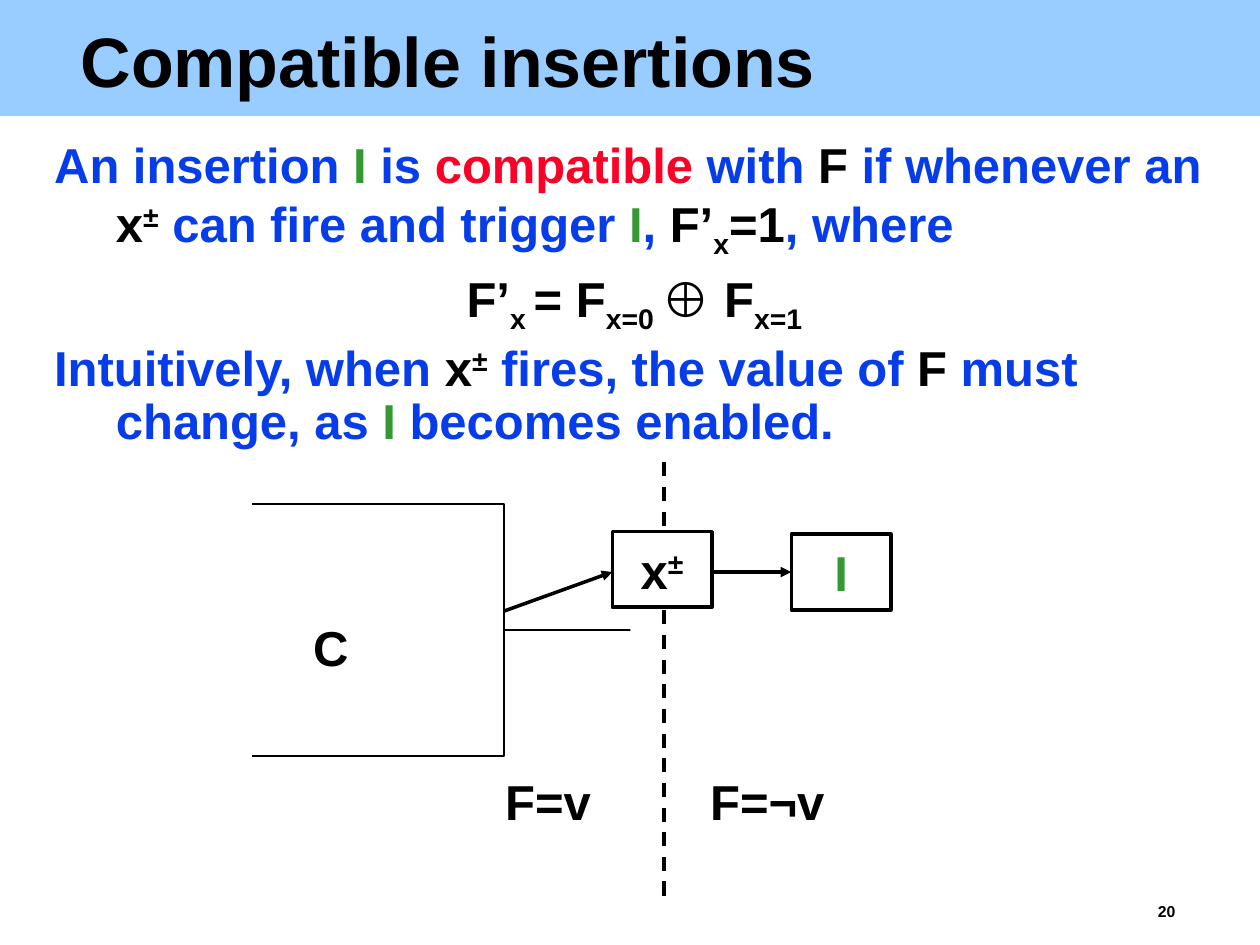
from dataclasses import dataclass

from pptx import Presentation
from pptx import util as u
from pptx.dml.color import RGBColor
from pptx.enum import dml, shapes, text
from pptx.oxml import ns
from lxml import etree


@dataclass(frozen=True)
class Theme:
    font: str = "Arial"
    ink: str = "000000"
    blue: str = "063DE8"
    green: str = "339933"
    red: str = "FC0128"
    band: str = "99CCFF"
    paper: str = "FFFFFF"
    head: int = 40
    body: int = 28
    note: int = 9
    thick: float = 2
    thin: float = 0.75


T = Theme()
LEFT, MID = text.PP_ALIGN.LEFT, text.PP_ALIGN.CENTER
SUP, SUB = 30, -25
PLUS = [("x", T.ink), ("±", T.ink, SUP)]


def rgb(code):
    return RGBColor.from_string(code)


def inches(*vals):
    return [u.Inches(v) for v in vals]


def add(parent, tag, **attrs):
    return etree.SubElement(parent, ns.qn(tag), attrs)


def write(para, runs, size=T.body, align=MID, lead=1, gap=0):
    para.alignment, para.line_spacing = align, lead
    para.space_before = u.Pt(gap)
    font = para.font
    font.name, font.size, font.bold = T.font, u.Pt(size), True
    for words, color, *base in runs:
        run = para.add_run()
        run.text = words
        run.font.color.rgb = rgb(color)
        if base:
            run.font._element.set("baseline", str(base[0] * 1000))


def setup(frame, pad=(0.1, 0.05), wrap=True, anchor=text.MSO_ANCHOR.TOP):
    frame.margin_left = frame.margin_right = u.Inches(pad[0])
    frame.margin_top = frame.margin_bottom = u.Inches(pad[1])
    frame.word_wrap, frame.vertical_anchor = wrap, anchor
    frame.auto_size = text.MSO_AUTO_SIZE.NONE


def place(shape, box):
    shape.left, shape.top, shape.width, shape.height = inches(*box)


def label(slide, box, words, size=T.body, **opts):
    frame = slide.shapes.add_textbox(*inches(*box)).text_frame
    setup(frame, **opts)
    write(frame.paragraphs[0], [(words, T.ink)], size)


def rect(slide, box, fill=None, line=None, runs=()):
    shape = slide.shapes.add_shape(shapes.MSO_SHAPE.RECTANGLE, *inches(*box))
    shape.shadow.inherit = False
    if fill:
        shape.fill.solid()
        shape.fill.fore_color.rgb = rgb(fill)
    else:
        shape.fill.background()
    if line:
        shape.line.color.rgb, shape.line.width = rgb(line), u.Pt(T.thick)
    else:
        shape.line.fill.background()
    if runs:
        setup(shape.text_frame, anchor=text.MSO_ANCHOR.MIDDLE)
        write(shape.text_frame.paragraphs[0], runs)


def link(slide, start, end, dash=False):
    line = slide.shapes.add_connector(
        shapes.MSO_CONNECTOR.STRAIGHT, *inches(*start, *end))
    line.line.color.rgb, line.line.width = rgb(T.ink), u.Pt(T.thick)
    if dash:
        line.line.dash_style = dml.MSO_LINE.DASH
    else:
        add(line.line._get_or_add_ln(), "a:tailEnd", type="triangle")
    add(line._element.spPr, "a:effectLst")


def bezier(pts, steps=24):
    for n in range(1, steps + 1):
        t = n / steps
        mix = ((1 - t) ** 3, 3 * t * (1 - t) ** 2, 3 * t * t * (1 - t), t ** 3)
        yield tuple(sum(m * p[k] for m, p in zip(mix, pts)) for k in (0, 1))


def curve(slide, start, arcs):
    pts = [start]
    for arc in arcs:
        pts += list(bezier([pts[-1], *arc]))
    build = slide.shapes.build_freeform(*start, scale=u.Inches(1))
    build.add_line_segments(pts[1:], close=False)
    shape = build.convert_to_shape()
    shape.shadow.inherit = False
    shape.fill.background()
    shape.line.color.rgb, shape.line.width = rgb(T.ink), u.Pt(T.thin)


def title(slide, words):
    shape = slide.shapes.title
    place(shape, (0.58, 0.21, 8.83, 0.62))
    setup(shape.text_frame, (0.06, 0.02), anchor=text.MSO_ANCHOR.MIDDLE)
    write(shape.text_frame.paragraphs[0], [(words, T.ink)], T.head, LEFT, 0.87)


def body(slide, paras):
    shape = slide.placeholders[1]
    place(shape, (0.35, 1.08, 9.37, 2.59))
    frame = shape.text_frame
    setup(frame, (0.08, 0.04))
    for n, (align, runs) in enumerate(paras):
        para = frame.add_paragraph() if n else frame.paragraphs[0]
        write(para, runs, align=align, lead=0.9, gap=0.3 * T.body)
        props = para._p.get_or_add_pPr()
        dent = u.Inches(0.49)
        props.set("marL", str(dent))
        props.set("indent", str(-dent))
        bullet = etree.Element(ns.qn("a:buNone"))
        props.find(ns.qn("a:defRPr")).addprevious(bullet)


def diagram(slide):
    link(slide, (5.27, 3.67), (5.27, 7.14), dash=True)
    curve(slide, (2.42, 4.06), [
        [(3.6, 4.43), (4.77, 4.79), (4.78, 5.17)],
        [(4.8, 5.55), (2.88, 6.15), (2.5, 6.35)]])
    label(slide, (2.19, 4.85, 0.87, 0.57), "C")
    rect(slide, (4.86, 4.22, 0.79, 0.6), T.paper, T.ink, PLUS)
    link(slide, (4, 4.85), (4.86, 4.54))
    rect(slide, (6.28, 4.24, 0.79, 0.6), None, T.ink, [("I", T.green)])
    link(slide, (5.65, 4.54), (6.28, 4.54))
    for left, width, words in ((4.01, 0.68, "F=v"), (5.61, 0.96, "F=¬v")):
        label(slide, (left, 6.12, width, 0.47), words, pad=(0, 0), wrap=False)


def main():
    deck = Presentation()
    deck.slide_width, deck.slide_height = inches(10, 7.5)
    layout = deck.slide_layouts.get_by_name("Title and Content")
    slide = deck.slides.add_slide(layout)
    rect(slide, (0, 0, 10, 0.92), T.band)
    tree = slide.shapes._spTree
    tree.insert(2, tree[-1])
    label(slide, (9.13, 7.14, 0.26, 0.19), "20", T.note,
          pad=(0.06, 0.02), wrap=False)
    title(slide, "Compatible insertions")
    body(slide, [
        (LEFT, [("An insertion ", T.blue), ("I", T.green), (" is ", T.blue),
                ("compatible", T.red), (" with ", T.blue), ("F", T.ink),
                (" if whenever an ", T.blue), *PLUS,
                (" can fire and trigger ", T.blue), ("I", T.green),
                (", ", T.blue), ("F’", T.ink), ("x", T.ink, SUB),
                ("=1", T.ink), (", where", T.blue)]),
        (MID, [("F’", T.ink), ("x ", T.ink, SUB), ("= F", T.ink),
               ("x=0 ", T.ink, SUB), ("⊕ F", T.ink), ("x=1", T.ink, SUB)]),
        (LEFT, [("Intuitively, when ", T.blue), *PLUS,
                (" fires, the value of ", T.blue), ("F", T.ink),
                (" must change, as ", T.blue), ("I", T.green),
                (" becomes enabled.", T.blue)])])
    diagram(slide)
    deck.save("out.pptx")


if __name__ == "__main__":
    main()
